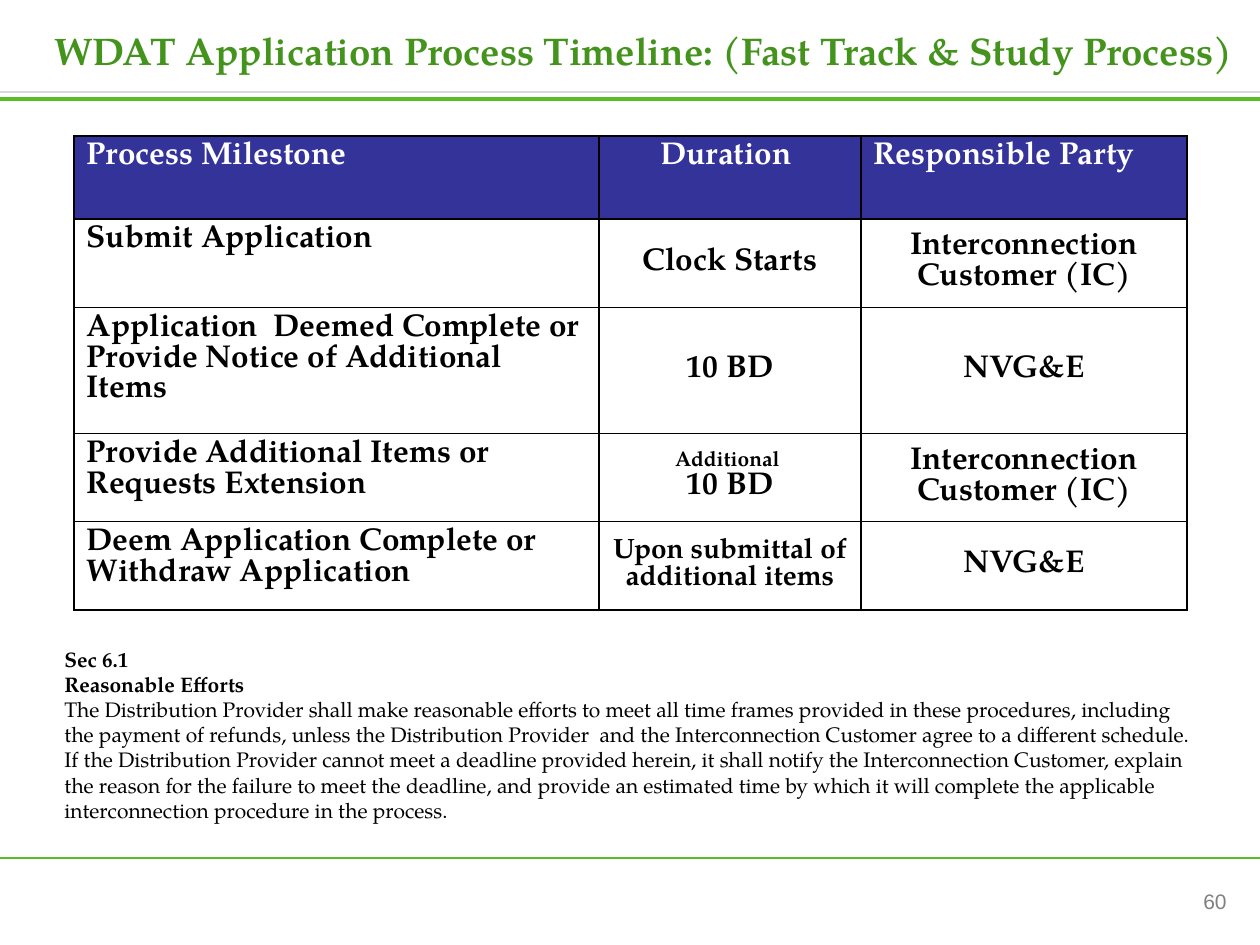
from lxml.etree import SubElement
from pptx import Presentation
from pptx.dml.color import RGBColor
from pptx.enum.shapes import MSO_CONNECTOR as Connector
from pptx.enum.text import MSO_ANCHOR as Anchor, PP_ALIGN as Align
from pptx.oxml.ns import qn
from pptx.util import Emu, Pt

PX_PER_INCH = 126
PAGE_W, PAGE_H = 1260, 945
SERIF, SANS = "TeX Gyre Pagella", "Arial"
COLORS = {
    "title": "44931D", "green": "58BD25", "rule": "D9D9D9", "header": "333399",
    "white": "FFFFFF", "black": "000000", "number": "808080",
}

TITLE = "WDAT Application Process Timeline: (Fast Track & Study Process)"
COLUMN_WIDTHS = [525, 262, 326]
ROW_HEIGHTS = [83, 88, 126, 88, 88]
CUSTOMER, UTILITY = "Interconnection Customer (IC)", "NVG&E"
# A cell is a list of (text, size) paragraphs or a plain text
ROWS = [
    ["Process Milestone", "Duration ", "Responsible Party"],
    ["Submit Application", "Clock Starts", CUSTOMER],
    ["Application  Deemed Complete or Provide Notice of Additional Items",
     "10 BD", UTILITY],
    ["Provide Additional Items or Requests Extension",
     [("Additional ", 12), ("10 BD", 18)], CUSTOMER],
    ["Deem Application Complete or Withdraw Application",
     [("Upon submittal of additional items", 16)], UTILITY],
]
NOTE_HEADINGS = ["Sec 6.1", "Reasonable Efforts"]
NOTE_BODY = (
    "The Distribution Provider shall make reasonable efforts to meet all time "
    "frames provided in these procedures, including the payment of refunds, "
    "unless the Distribution Provider  and the Interconnection Customer agree "
    "to a different schedule. If the Distribution Provider cannot meet a "
    "deadline provided herein, it shall notify the Interconnection Customer, "
    "explain the reason for the failure to meet the deadline, and provide an "
    "estimated time by which it will complete the applicable interconnection "
    "procedure in the process."
)


def px(length):
    return Emu(round(length * 914400 / PX_PER_INCH))


def color(name):
    return RGBColor.from_string(COLORS[name])


def write(frame, text, size=12, font=SERIF, ink="black", bold=False,
          align=Align.LEFT):
    """Add one formatted paragraph, using the empty first one if it is free."""
    para = frame.paragraphs[0]
    if para.runs:
        para = frame.add_paragraph()
    para.alignment = align
    span = para.add_run()
    span.text = text
    span.font.size, span.font.name, span.font.bold = Pt(size), font, bold
    span.font.color.rgb = color(ink)


def add_frame(page, box):
    frame = page.shapes.add_textbox(*map(px, box)).text_frame
    frame.word_wrap = True
    return frame


def add_rule(page, y, ink, weight):
    rule = page.shapes.add_connector(
        Connector.STRAIGHT, 0, px(y), px(PAGE_W), px(y))
    rule.line.color.rgb = color(ink)
    rule.line.width = Pt(weight)
    SubElement(rule._element.spPr, qn("a:effectLst"))


def add_borders(cell):
    props = cell._tc.get_or_add_tcPr()
    for side in ("lnL", "lnR", "lnT", "lnB"):
        line = SubElement(props, qn(f"a:{side}"), w=str(Pt(1)))
        fill = SubElement(line, qn("a:solidFill"))
        SubElement(fill, qn("a:srgbClr"), val=COLORS["black"])


def fill_cell(cell, content, is_header, is_first_column):
    add_borders(cell)
    if is_header:
        cell.fill.solid()
        cell.fill.fore_color.rgb = color("header")
    else:
        cell.fill.background()
    centred = not is_first_column
    if centred and not is_header:
        cell.vertical_anchor = Anchor.MIDDLE
    if is_header and content == "Responsible Party":
        centred = False
    paragraphs = [(content, 18)] if isinstance(content, str) else content
    for text, size in paragraphs:
        write(cell.text_frame, text, size=size, bold=True,
              ink="white" if is_header else "black",
              align=Align.CENTER if centred else Align.LEFT)


def add_timeline(page, left, top):
    table = page.shapes.add_table(
        len(ROWS), len(COLUMN_WIDTHS), px(left), px(top),
        px(sum(COLUMN_WIDTHS)), px(sum(ROW_HEIGHTS))).table
    table.first_row = table.horz_banding = False
    for column, width in zip(table.columns, COLUMN_WIDTHS):
        column.width = px(width)
    for row, height in zip(table.rows, ROW_HEIGHTS):
        row.height = px(height)
    for r, contents in enumerate(ROWS):
        for c, content in enumerate(contents):
            fill_cell(table.cell(r, c), content, r == 0, c == 0)


def add_title(page, box):
    write(add_frame(page, box), TITLE, size=22, ink="title", bold=True)


def add_note(page, box):
    frame = add_frame(page, box)
    for heading in NOTE_HEADINGS:
        write(frame, heading, bold=True)
    write(frame, NOTE_BODY)


def add_page_number(page, box):
    write(add_frame(page, box), "60", font=SANS, ink="number",
          align=Align.RIGHT)


def main():
    deck = Presentation()
    deck.slide_width, deck.slide_height = px(PAGE_W), px(PAGE_H)
    page = deck.slides.add_slide(deck.slide_layouts[6])

    # Rules under the title and above the footer
    add_rule(page, 92, "rule", 1.5)
    add_rule(page, 858, "green", 1.5)
    add_rule(page, 99, "green", 2.25)

    # Title, table, note and page number
    add_title(page, (42, 21, 1218, 59))
    add_timeline(page, 74, 136)
    add_note(page, (52, 640, 1156, 190))
    add_page_number(page, (966, 882, 273, 63))

    deck.save("out.pptx")


if __name__ == "__main__":
    main()
